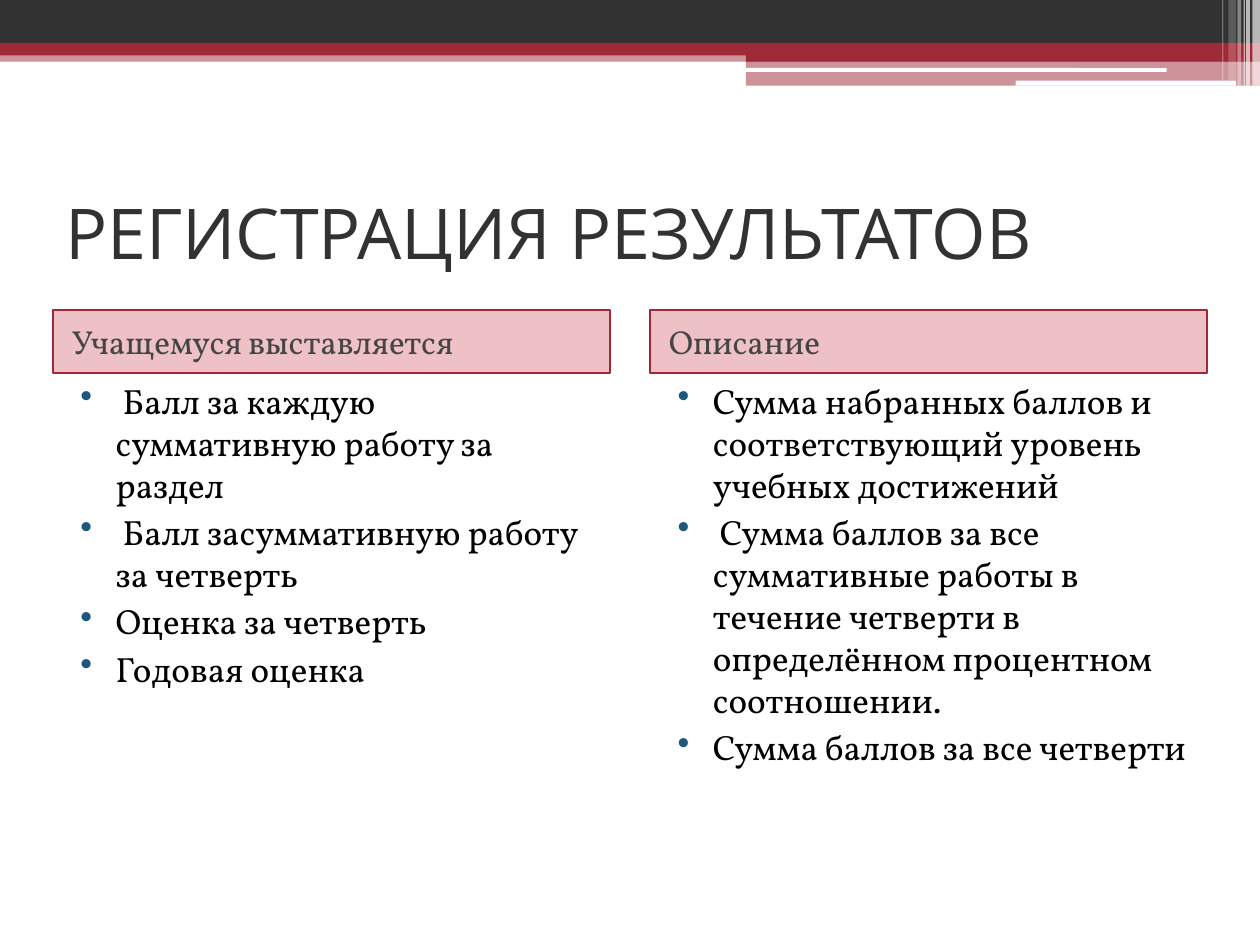
"""Build the slide on registering assessment results."""
from lxml.etree import SubElement
from pptx import Presentation
from pptx.dml.color import RGBColor
from pptx.enum.shapes import MSO_SHAPE as Shape
from pptx.enum.text import MSO_ANCHOR as Anchor, PP_ALIGN as Align
from pptx.oxml.ns import qn
from pptx.util import Inches, Pt

WHITE = RGBColor(0xFF, 0xFF, 0xFF)
BLACK = RGBColor(0x00, 0x00, 0x00)
CHARCOAL = RGBColor(0x32, 0x32, 0x32)
GREY = RGBColor(0x45, 0x45, 0x45)
CRIMSON = RGBColor(0x9F, 0x29, 0x36)
SCARLET = RGBColor(0xBC, 0x0B, 0x1F)
NAVY = RGBColor(0x1B, 0x58, 0x7C)

MARGIN, COLUMN_STEP, COLUMN_WIDTH = 0.42, 4.74, 4.42

BANDS = [
    (0, 0.4, 10, 0.09, CRIMSON, 50),
    (0, 0, 10, 0.34, CHARCOAL, 100),
    (0, 0.34, 10, 0.1, CRIMSON, 100),
    (5.92, 0.39, 4.08, 0.1, CRIMSON, 100),
    (5.92, 0.48, 4.08, 0.2, CRIMSON, 50),
]
SLITS = [(5.91, 0.54, 3.35, 0.03), (8.06, 0.64, 1.75, 0.04)]
STRIPES = [
    (9.94, 0.06, 0.68, 65),
    (9.89, 0.03, 0.68, 65),
    (9.87, 0.01, 0.68, 60),
    (9.82, 0.03, 0.68, 40),
    (9.75, 0.06, 0.64, 20),
    (9.7, 0.01, 0.64, 30),
]
COLUMNS = [
    ("Учащемуся выставляется", [
        " Балл за каждую суммативную работу за раздел",
        " Балл засуммативную работу за четверть",
        "Оценка за четверть",
        "Годовая оценка",
    ]),
    ("Описание", [
        "Сумма набранных баллов и соответствующий уровень учебных достижений",
        " Сумма баллов за все суммативные работы в течение четверти в"
        " определённом процентном соотношении.",
        "Сумма баллов за все четверти",
    ]),
]


class SlideBuilder:
    heading_font = "Open Sans"
    body_font = "Vollkorn"

    def __init__(self, slide):
        self.slide = slide

    def block(self, left, top, width, height, color, opacity=100, kind=Shape.RECTANGLE):
        block = self.slide.shapes.add_shape(
            kind, Inches(left), Inches(top), Inches(width), Inches(height))
        block.shadow.inherit = False
        block.fill.solid()
        block.fill.fore_color.rgb = color
        block.line.fill.background()
        if opacity < 100:
            tint = block.fill._xPr.find(qn("a:solidFill"))[0]
            SubElement(tint, qn("a:alpha"), val=str(opacity * 1000))
        return block

    def text_area(self, left, top, width, height, anchor):
        area = self.slide.shapes.add_textbox(
            Inches(left), Inches(top), Inches(width), Inches(height))
        area.text_frame.word_wrap = True
        area.text_frame.vertical_anchor = anchor
        return area.text_frame

    def styled_run(self, paragraph, words, font, size, color):
        run = paragraph.add_run()
        run.text = words
        run.font.name = font
        run.font.size = Pt(size)
        run.font.color.rgb = color

    def indent(self, paragraph, margin, first=0):
        paragraph.space_before = Pt(3)
        properties = paragraph._p.get_or_add_pPr()
        properties.set("marL", str(Inches(margin)))
        properties.set("indent", str(Inches(first)))
        return properties

    def title(self, words):
        frame = self.text_area(MARGIN, 1.25, 9.17, 1.17, Anchor.MIDDLE)
        self.styled_run(frame.paragraphs[0], words, self.heading_font, 40, CHARCOAL)

    def column_header(self, left, words):
        header = self.block(left, 2.46, COLUMN_WIDTH, 0.5, SCARLET, 25)
        header.line.color.rgb = CRIMSON
        header.line.width = Pt(1)
        header.text_frame.vertical_anchor = Anchor.MIDDLE
        paragraph = header.text_frame.paragraphs[0]
        paragraph.alignment = Align.LEFT
        self.indent(paragraph, 0.05)
        self.styled_run(paragraph, words, self.body_font, 19, GREY)

    def bullet_list(self, left, items):
        frame = self.text_area(left, 2.96, COLUMN_WIDTH, 4.25, Anchor.TOP)
        for number, item in enumerate(items):
            paragraph = frame.add_paragraph() if number else frame.paragraphs[0]
            properties = self.indent(paragraph, 0.4, -0.28)
            bullet_color = SubElement(properties, qn("a:buClr"))
            SubElement(bullet_color, qn("a:srgbClr"), val=str(NAVY))
            SubElement(properties, qn("a:buChar"), char="•")
            self.styled_run(paragraph, item, self.body_font, 20, BLACK)


def main():
    deck = Presentation()
    deck.slide_width, deck.slide_height = Inches(10), Inches(7.5)
    builder = SlideBuilder(deck.slides.add_slide(deck.slide_layouts[6]))

    for band in BANDS:
        builder.block(*band)
    for slit in SLITS:
        builder.block(*slit, WHITE, kind=Shape.ROUNDED_RECTANGLE)
    for left, width, height, opacity in STRIPES:
        builder.block(left, 0, width, height, WHITE, opacity)

    builder.title("РЕГИСТРАЦИЯ РЕЗУЛЬТАТОВ")
    for number, (heading, items) in enumerate(COLUMNS):
        left = MARGIN + number * COLUMN_STEP
        builder.column_header(left, heading)
        builder.bullet_list(left, items)

    deck.save("out.pptx")


if __name__ == "__main__":
    main()
